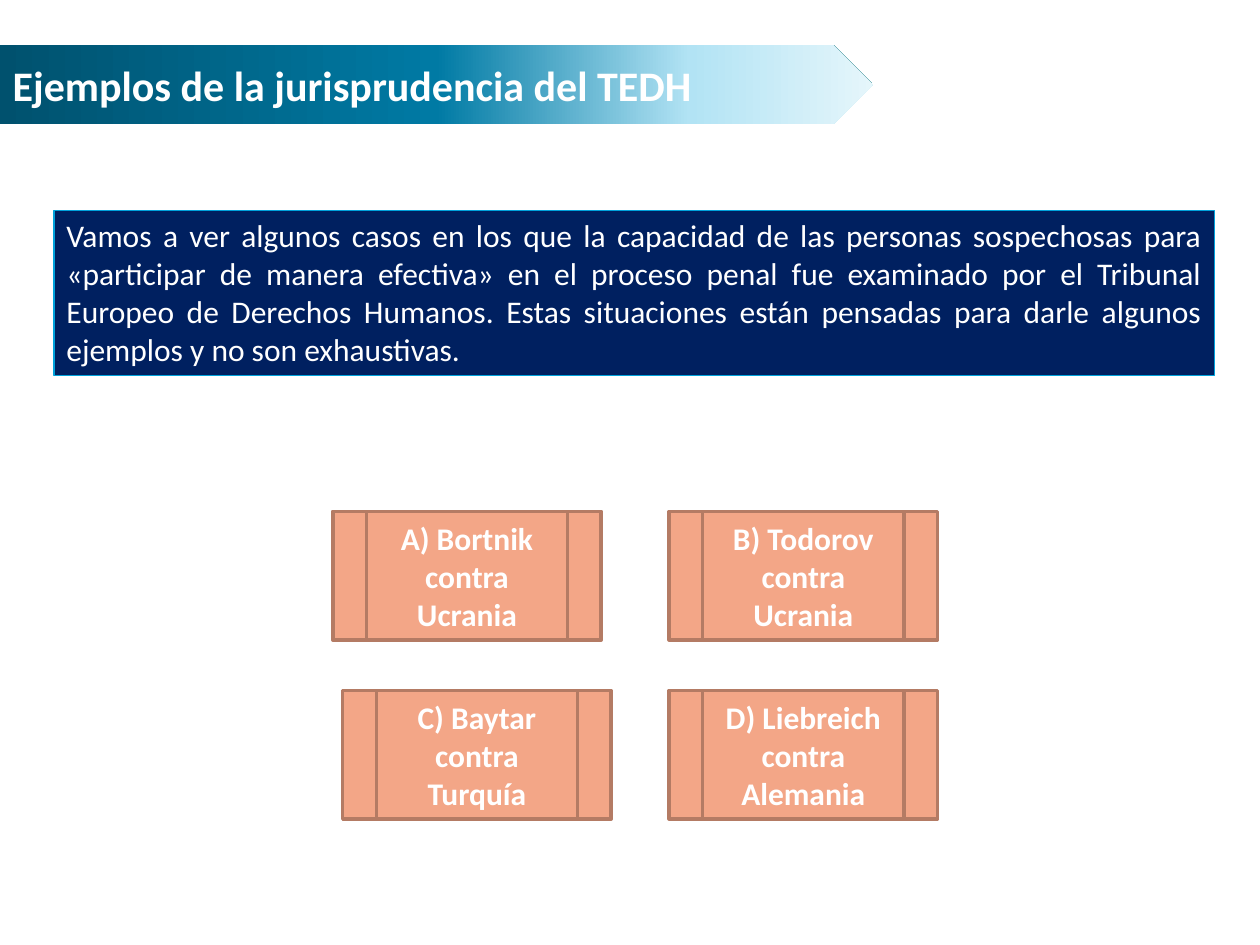
import lxml.etree
import pptx
import pptx.dml.color
import pptx.enum.shapes
import pptx.enum.text
import pptx.oxml
import pptx.oxml.ns
import pptx.util

Cm = pptx.util.Cm
SHAPE = pptx.enum.shapes.MSO_SHAPE
ALIGN = pptx.enum.text.PP_ALIGN
ANCHOR = pptx.enum.text.MSO_ANCHOR

BANNER_STOPS = [(0, "00516E"), (50, "007AA4"), (79, "B2E3F4"), (100, "E5F6FB")]
INTRO = (
    "Vamos a ver algunos casos en los que la capacidad de las personas sospechosas "
    "para «participar de manera efectiva» en el proceso penal fue examinado por el "
    "Tribunal Europeo de Derechos Humanos. Estas situaciones están pensadas para "
    "darle algunos ejemplos y no son exhaustivas."
)
# Each row: left edge of the first card, then the two cases
CASE_ROWS = [
    (0, ["A) Bortnik contra Ucrania", "B) Todorov contra Ucrania"]),
    (0.2, ["C) Baytar contra Turquía", "D) Liebreich contra Alemania"]),
]


def color(hex_code):
    return pptx.dml.color.RGBColor.from_string(hex_code)


def apply_format(target, values):
    for name, value in values.items():
        setattr(target, name, value)


def write(holder, text, size, bold, align, anchor):
    frame = holder.text_frame
    apply_format(frame, {
        "text": text,
        "word_wrap": True,
        "auto_size": pptx.enum.text.MSO_AUTO_SIZE.NONE,
        "vertical_anchor": anchor,
    })
    paragraph = frame.paragraphs[0]
    apply_format(paragraph, {"alignment": align, "line_spacing": 1.0})
    font = paragraph.runs[0].font
    apply_format(font, {"name": "Calibri", "size": pptx.util.Pt(size), "bold": bold})
    font.color.rgb = color("FFFFFF")


def add_panel(slide, kind, box, fill, line, line_width):
    panel = slide.shapes.add_shape(kind, *map(Cm, box))
    panel.shadow.inherit = False
    panel.fill.solid()
    panel.fill.fore_color.rgb = color(fill)
    panel.line.color.rgb = color(line)
    panel.line.width = pptx.util.Pt(line_width)
    return panel


def set_gradient(fill, stops):
    """Horizontal gradient with any number of (percent, hex) stops."""
    fill.gradient()
    fill.gradient_angle = 0
    stop_list = fill._xPr.find(".//" + pptx.oxml.ns.qn("a:gsLst"))
    stop_list.clear()
    for percent, hex_code in stops:
        stop = lxml.etree.SubElement(
            stop_list, pptx.oxml.ns.qn("a:gs"), pos=str(percent * 1000))
        lxml.etree.SubElement(stop, pptx.oxml.ns.qn("a:srgbClr"), val=hex_code)


def add_banner_title(slide, box, text):
    left, top, width, height = map(Cm, box)
    title = slide.shapes.title
    apply_format(title, {"left": left, "top": top, "width": width, "height": height})
    write(title, text, 24, True, ALIGN.LEFT, ANCHOR.MIDDLE)

    banner = slide.shapes.add_shape(SHAPE.PENTAGON, left, top, width, height)
    banner.shadow.inherit = False
    banner.line.fill.background()
    set_gradient(banner.fill, BANNER_STOPS)
    title._element.addprevious(banner._element)  # the banner lies behind the title


def add_intro(slide, box, text):
    intro = add_panel(slide, SHAPE.RECTANGLE, box, "002060", "00A2DB", 0.75)
    write(intro, text, 18, False, ALIGN.JUSTIFY, ANCHOR.TOP)


def add_cases(slide, box, rows):
    left, top, width, height = box
    card_width, card_height = 5.41, 2.59
    column_step = width - card_width
    row_step = height - card_height
    for row, (indent, cases) in enumerate(rows):
        for card_left, case in zip((left + indent, left + column_step), cases):
            card_box = (card_left, top + row * row_step, card_width, card_height)
            card = add_panel(slide, SHAPE.FLOWCHART_PREDEFINED_PROCESS, card_box,
                             "F3A687", "B47B64", 2)
            write(card, case, 18, True, ALIGN.CENTER, ANCHOR.MIDDLE)


def main():
    deck = pptx.Presentation()
    apply_format(deck, {"slide_width": Cm(25.4), "slide_height": Cm(19.05)})
    slide = deck.slides.add_slide(deck.slide_layouts.get_by_name("Title Only"))
    add_banner_title(slide, (0, 0.91, 17.6, 1.6), "Ejemplos de la jurisprudencia del TEDH")
    add_intro(slide, (1.09, 4.24, 23.39, 3.33), INTRO)
    add_cases(slide, (6.71, 10.31, 12.19, 6.2), CASE_ROWS)
    deck.save("out.pptx")


if __name__ == "__main__":
    main()
